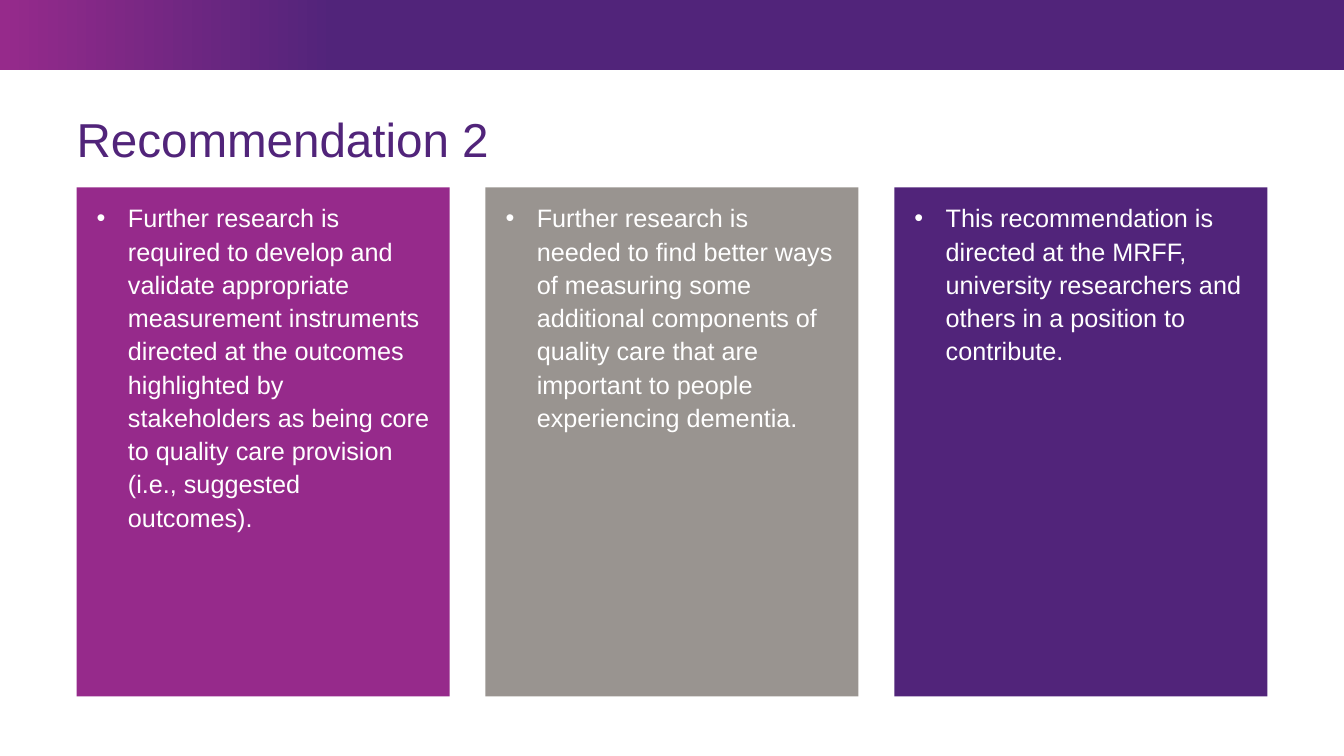
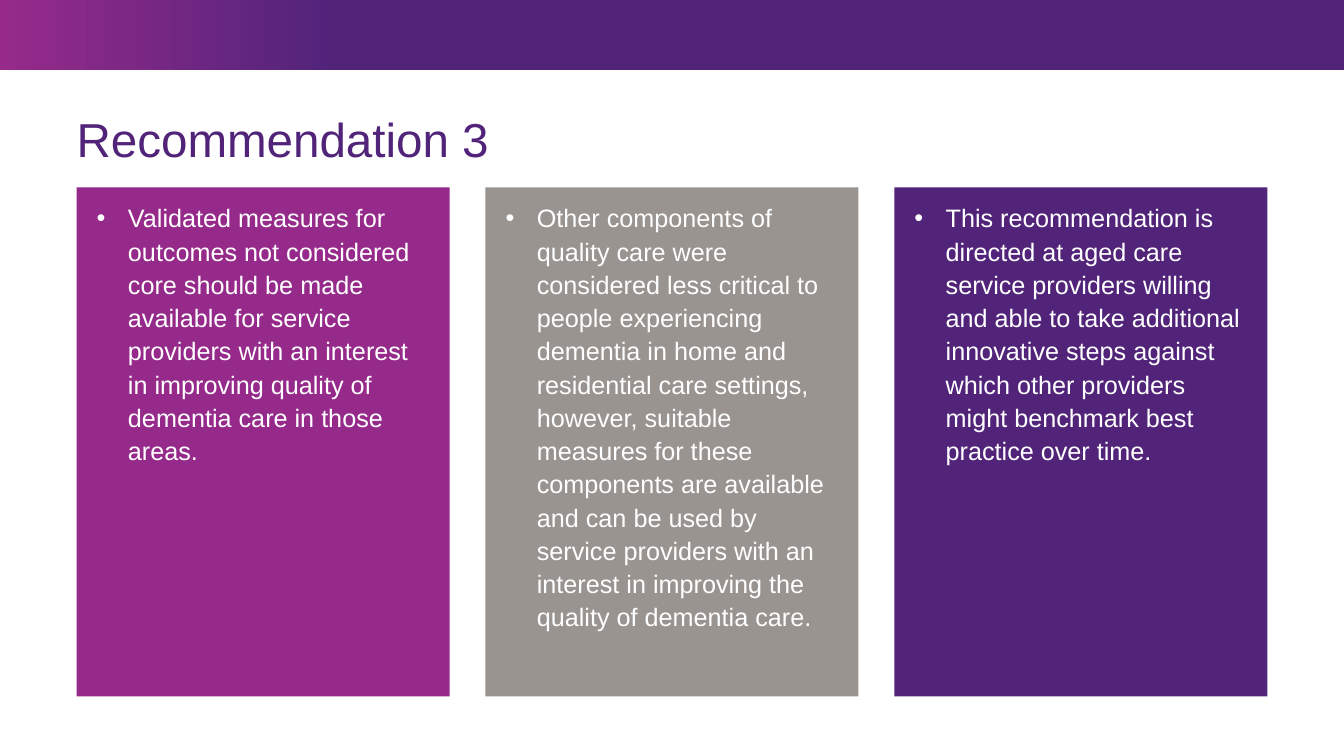
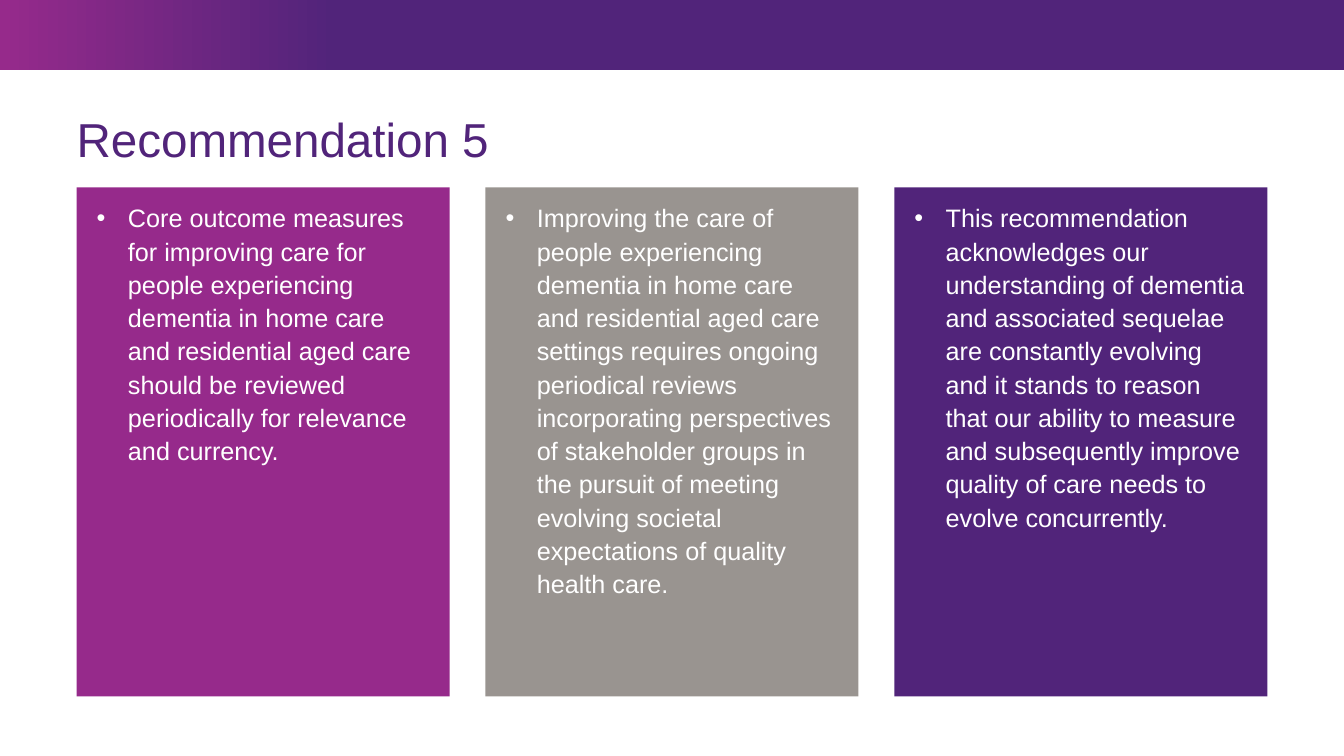
from lxml import etree
from pptx import Presentation
from pptx import util as u
from pptx.dml.color import RGBColor
from pptx.enum import shapes, text
from pptx.oxml import ns

COLORS = {
    "purple": "51247A",
    "magenta": "962A8B",
    "grey": "999490",
    "white": "FFFFFF",
}
FONT = "Arial"
SLIDE_WIDTH, SLIDE_HEIGHT = 13.33, 7.5
MARGIN = 0.76
CONTENT_WIDTH = SLIDE_WIDTH - 2 * MARGIN
CARD_WIDTH = 3.7
CARD_FILLS = ("magenta", "grey", "purple")
BULLET_INDENT = 0.31

RECOMMENDATIONS = [
    ("Recommendation 2", (
        "Further research is required to develop and validate appropriate measurement "
        "instruments directed at the outcomes highlighted by stakeholders as being core "
        "to quality care provision (i.e., suggested outcomes).",
        "Further research is needed to find better ways of measuring some additional "
        "components of quality care that are important to people experiencing dementia.",
        "This recommendation is directed at the MRFF, university researchers and others "
        "in a position to contribute.",
    )),
    ("Recommendation 3", (
        "Validated measures for outcomes not considered core should be made available "
        "for service providers with an interest in improving quality of dementia care "
        "in those areas.",
        "Other components of quality care were considered less critical to people "
        "experiencing dementia in home and residential care settings, however, suitable "
        "measures for these components are available and can be used by service "
        "providers with an interest in improving the quality of dementia care.",
        "This recommendation is directed at aged care service providers willing and able "
        "to take additional innovative steps against which other providers might "
        "benchmark best practice over time.",
    )),
    ("Recommendation 5", (
        "Core outcome measures for improving care for people experiencing dementia in "
        "home care and residential aged care should be reviewed periodically for "
        "relevance and currency.",
        "Improving the care of people experiencing dementia in home care and residential "
        "aged care settings requires ongoing periodical reviews incorporating "
        "perspectives of stakeholder groups in the pursuit of meeting evolving societal "
        "expectations of quality health care.",
        "This recommendation acknowledges our understanding of dementia and associated "
        "sequelae are constantly evolving and it stands to reason that our ability to "
        "measure and subsequently improve quality of care needs to evolve concurrently.",
    )),
]


def color(name):
    return RGBColor.from_string(COLORS[name])


def add_bullet(paragraph, color_name):
    properties = paragraph._p.get_or_add_pPr()
    properties.set("marL", str(u.Inches(BULLET_INDENT)))
    properties.set("indent", str(-u.Inches(BULLET_INDENT)))
    bullet_color = etree.SubElement(properties, ns.qn("a:buClr"))
    etree.SubElement(bullet_color, ns.qn("a:srgbClr"), val=COLORS[color_name])
    etree.SubElement(properties, ns.qn("a:buFont"), typeface=FONT)
    etree.SubElement(properties, ns.qn("a:buChar"), char="•")


def write_text(shape, content, *, size, color_name, line_spacing, insets=(0, 0, 0, 0),
               anchor=text.MSO_ANCHOR.TOP, bullet=False):
    """Fill the shape with one paragraph; insets are left, top, right, bottom in inches."""
    frame = shape.text_frame
    frame.word_wrap = True
    frame.vertical_anchor = anchor
    (frame.margin_left, frame.margin_top,
     frame.margin_right, frame.margin_bottom) = map(u.Inches, insets)
    paragraph = frame.paragraphs[0]
    paragraph.text = content
    paragraph.alignment = text.PP_ALIGN.LEFT
    paragraph.line_spacing = line_spacing
    if bullet:
        add_bullet(paragraph, color_name)
    font = paragraph.runs[0].font
    font.name = FONT
    font.size = u.Pt(size)
    font.color.rgb = color(color_name)


def add_rectangle(slide, left, top, width, height):
    shape = slide.shapes.add_shape(
        shapes.MSO_SHAPE.RECTANGLE, *map(u.Inches, (left, top, width, height)))
    shape.shadow.inherit = False
    shape.line.fill.background()
    return shape


def add_band(slide, left, top, width, height):
    band = add_rectangle(slide, left, top, width, height)
    band.fill.gradient()
    band.fill.gradient_angle = 0
    stops = ((0, "magenta"), (0.25, "purple"))
    for stop, (position, color_name) in zip(band.fill.gradient_stops, stops):
        stop.position = position
        stop.color.rgb = color(color_name)


def add_title(slide, title, left, top, width, height):
    box = slide.shapes.add_textbox(*map(u.Inches, (left, top, width, height)))
    write_text(box, title, size=34, color_name="purple", line_spacing=0.9,
               anchor=text.MSO_ANCHOR.MIDDLE)


def add_cards(slide, contents, left, top, width, height):
    """Spread equal cards over the width, the outer ones flush with its ends."""
    step = (width - CARD_WIDTH) / (len(contents) - 1)
    for index, (content, fill) in enumerate(zip(contents, CARD_FILLS)):
        card = add_rectangle(slide, left + index * step, top, CARD_WIDTH, height)
        card.fill.solid()
        card.fill.fore_color.rgb = color(fill)
        write_text(card, content, size=18, color_name="white", line_spacing=1.1,
                   insets=(0.2, 0.12, 0.2, 0.2), bullet=True)


def add_recommendation(presentation, title, contents):
    slide = presentation.slides.add_slide(presentation.slide_layouts[6])
    add_band(slide, 0, 0, SLIDE_WIDTH, 0.69)
    add_title(slide, title, MARGIN, 1.15, CONTENT_WIDTH, 0.51)
    add_cards(slide, contents, MARGIN, 1.86, CONTENT_WIDTH, 5.05)


def main():
    presentation = Presentation()
    presentation.slide_width = u.Inches(SLIDE_WIDTH)
    presentation.slide_height = u.Inches(SLIDE_HEIGHT)
    for title, contents in RECOMMENDATIONS:
        add_recommendation(presentation, title, contents)
    presentation.save("out.pptx")


if __name__ == "__main__":
    main()
